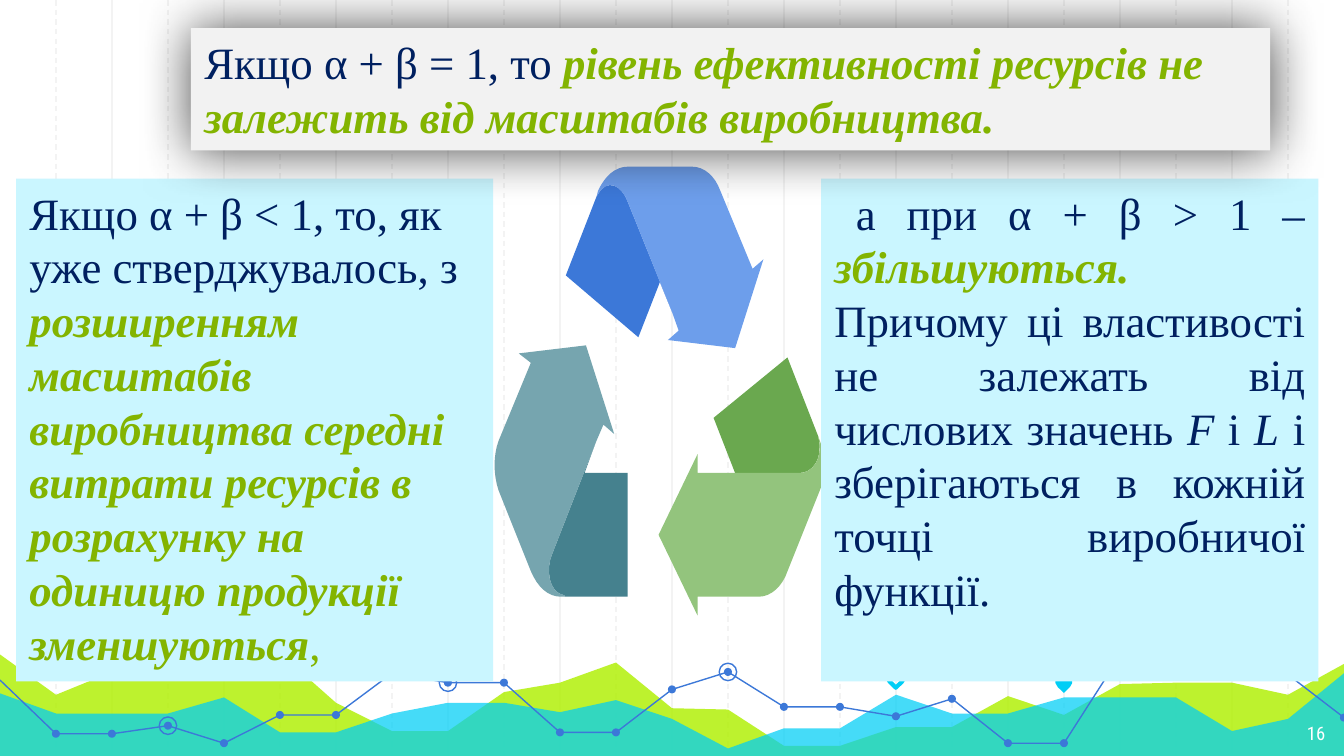
from dataclasses import dataclass

from lxml.etree import SubElement
from pptx import Presentation
from pptx.dml.color import RGBColor
from pptx.enum.dml import MSO_LINE
from pptx.enum.shapes import MSO_CONNECTOR, MSO_SHAPE
from pptx.enum.text import MSO_ANCHOR, MSO_AUTO_SIZE, PP_ALIGN
from pptx.oxml.ns import qn
from pptx.util import Cm, Pt


@dataclass(frozen=True)
class Theme:
    grid: str = "F3F3F3"
    lime: str = "AFF000"
    cyan: str = "00CEF6"
    blue: str = "3C78D8"
    light_blue: str = "6D9EEB"
    teal: str = "45818E"
    light_teal: str = "76A5AF"
    green: str = "6AA84F"
    light_green: str = "93C47D"
    panel: str = "CAF6FF"
    title_fill: str = "F2F2F2"
    text: str = "002060"
    accent: str = "83B400"
    white: str = "FFFFFF"
    body_font: str = "Times New Roman"
    number_font: str = "Roboto Condensed"
    body_size: float = 24
    body_leading: float = 28.8
    number_size: float = 10
    thin: float = 0.75


THEME = Theme()
STEP = 10 / 24  # distance between grid lines, in inches


def cm(inches):
    return Cm(inches * 2.54)


def bezier(start, curve, steps=8):
    """Points along a cubic curve, without its start."""
    x1, y1, x2, y2, x3, y3 = curve
    for i in range(1, steps + 1):
        t = i / steps
        u = 1 - t
        weights = (u ** 3, 3 * u * u * t, 3 * u * t * t, t ** 3)
        yield (sum(w * x for w, x in zip(weights, (start[0], x1, x2, x3))),
               sum(w * y for w, y in zip(weights, (start[1], y1, y2, y3))))


class SlideBuilder:
    def __init__(self, slide, theme):
        self.slide = slide
        self.shapes = slide.shapes
        self.theme = theme

    def paint(self, shape, fill=None, line=None, width=THEME.thin, opacity=None):
        shape.shadow.inherit = False
        if fill:
            shape.fill.solid()
            shape.fill.fore_color.rgb = RGBColor.from_string(fill)
            if opacity:
                color = shape.fill._xPr.find(qn("a:solidFill"))[0]
                SubElement(color, qn("a:alpha"), val=str(opacity * 1000))
        else:
            shape.fill.background()
        if line:
            shape.line.color.rgb = RGBColor.from_string(line)
            shape.line.width = Pt(width)
        else:
            shape.line.fill.background()
        return shape

    def grid_line(self, x, dashed):
        line = self.shapes.add_connector(MSO_CONNECTOR.STRAIGHT, cm(x), 0, cm(x), cm(5.65))
        line.line.color.rgb = RGBColor.from_string(self.theme.grid)
        line.line.width = Pt(self.theme.thin)
        if dashed:
            line.line.dash_style = MSO_LINE.DASH
        SubElement(line._element.spPr, qn("a:effectLst"))

    def preset(self, kind, box, rotation=0, **style):
        shape = self.shapes.add_shape(kind, *map(cm, box))
        shape.rotation = rotation
        return self.paint(shape, **style)

    def dot(self, x, y, size, **style):
        self.preset(MSO_SHAPE.OVAL, (x - size / 2, y - size / 2, size, size), **style)

    def outline(self, segments, close=True, **style):
        """A pair is a straight segment, six numbers are a cubic curve."""
        points = []
        for segment in segments:
            points.extend([segment] if len(segment) == 2 else bezier(points[-1], segment))
        points = [(cm(x), cm(y)) for x, y in points]
        builder = self.shapes.build_freeform(*points[0], scale=1.0)
        builder.add_line_segments(points[1:], close=close)
        self.paint(builder.convert_to_shape(), **style)

    def set_text(self, shape, runs, align=PP_ALIGN.LEFT, anchor=MSO_ANCHOR.TOP,
                 leading=None, indent=0):
        frame = shape.text_frame
        frame_format = {"word_wrap": True, "auto_size": MSO_AUTO_SIZE.NONE,
                        "vertical_anchor": anchor,
                        "margin_left": cm(0.1), "margin_right": cm(0.1),
                        "margin_top": cm(0.05), "margin_bottom": cm(0.05)}
        for name, value in frame_format.items():
            setattr(frame, name, value)
        paragraph = frame.paragraphs[0]
        paragraph_format = {"alignment": align, "space_before": Pt(0)}
        if leading:
            paragraph_format["line_spacing"] = Pt(leading)
        for name, value in paragraph_format.items():
            setattr(paragraph, name, value)
        if indent:
            properties = paragraph._p.get_or_add_pPr()
            properties.set("marL", "0")
            properties.set("indent", str(cm(indent)))
        for text, style in runs:
            run = paragraph.add_run()
            run.text = text
            font_format = {"name": self.theme.body_font, "size": Pt(self.theme.body_size),
                           "bold": False, "italic": False, "color": self.theme.text, **style}
            run.font.color.rgb = RGBColor.from_string(font_format.pop("color"))
            for name, value in font_format.items():
                setattr(run.font, name, value)

    def panel(self, box, runs, **layout):
        shape = self.preset(MSO_SHAPE.RECTANGLE, box, fill=self.theme.panel)
        self.set_text(shape, runs, leading=self.theme.body_leading, **layout)

    def title(self, box, runs):
        title = self.shapes.title
        for name, value in zip(("left", "top", "width", "height"), box):
            setattr(title, name, cm(value))
        self.paint(title, fill=self.theme.title_fill)
        effects = title._element.spPr.find(qn("a:effectLst"))
        shadow = SubElement(effects, qn("a:outerShdw"), blurRad=str(cm(0.4)), dist="0",
                            algn="ctr", rotWithShape="0")
        color = SubElement(shadow, qn("a:srgbClr"), val="000000")
        SubElement(color, qn("a:alpha"), val="70000")
        self.set_text(title, runs, leading=self.theme.body_leading)
        self.shapes._spTree.append(title._element)  # in front of the panels

    def slide_number(self, box, text):
        shape = self.shapes.add_textbox(*map(cm, box))
        style = {"name": self.theme.number_font, "size": Pt(self.theme.number_size),
                 "color": self.theme.white}
        self.set_text(shape, [(text, style)], PP_ALIGN.RIGHT, MSO_ANCHOR.MIDDLE)


LIME_HEIGHTS = [4.87, 5.17, 5, 5, 5, 4.86, 5.23, 5.44, 5.44, 5.15, 5.08, 4.93, 5.27, 5.28, 5.55,
                5.55, 5.41, 5.41, 5.18, 5.32, 5.09, 5.08, 5.08, 5.17, 4.94]
CYAN_HEIGHTS = [5.16, 5.31, 5.31, 5.31, 5.19, 5.45, 5.45, 5.31, 5.23, 5.23, 5.3, 5.21, 5.35, 5.57,
                5.42, 5.42, 5.17, 5.31, 5.31, 5.19, 5.19, 5.19, 5.44, 5.35, 5.01]
LINE_HEIGHTS = [5.06, 5.46, 5.46, 5.4, 5.53, 5.32, 5.32, 5.01, 5.08, 5.08, 5.45, 5.45, 5.13, 5,
                5.26, 5.26, 5.33, 5.2, 5.53, 5.53, 4.88, 5.02, 5.02, 5.02, 5.34]

# Folded arrows of the cycle: colour and outline
ARROWS = [
    (THEME.green, [(5.95, 3.52), (6.04, 3.52, 6.13, 3.42, 6.09, 3.25), (5.86, 2.66),
                   (5.31, 3.11), (5.47, 3.52)]),
    (THEME.teal, [(4.67, 3.52), (4.35, 3.52), (4.43, 3.3), (4.11, 4.12),
                  (4.06, 4.23, 4.08, 4.41, 4.2, 4.43), (4.2, 4.44), (4.67, 4.44)]),
    (THEME.blue, [(4.67, 1.5), (4.63, 1.39, 4.52, 1.31, 4.44, 1.46), (4.21, 2.05),
                  (4.75, 2.51), (4.91, 2.1), (5, 2.32)]),
    (THEME.light_teal, [(4.57, 3.23), (4.36, 2.57), (3.86, 2.63), (3.95, 2.7), (3.71, 3.28),
                        (3.67, 3.39, 3.67, 3.53, 3.71, 3.65), (3.95, 4.25),
                        (4, 4.37, 4.08, 4.44, 4.17, 4.44), (4.2, 4.44), (4.2, 4.43),
                        (4.08, 4.41, 4.06, 4.23, 4.11, 4.12), (4.43, 3.3), (4.49, 3.16)]),
    (THEME.light_blue, [(5.6, 2), (5.36, 1.42), (5.32, 1.31, 5.24, 1.24, 5.15, 1.24),
                        (4.67, 1.24), (4.58, 1.24, 4.5, 1.31, 4.45, 1.42), (4.44, 1.46),
                        (4.52, 1.31, 4.63, 1.39, 4.67, 1.5), (5, 2.32), (5.05, 2.46),
                        (4.97, 2.53), (5.47, 2.59), (5.68, 1.93)]),
    (THEME.light_green, [(6.1, 3.28), (6.09, 3.25), (6.13, 3.42, 6.04, 3.52, 5.95, 3.52),
                         (5.19, 3.52), (5.19, 3.38), (4.9, 3.98), (5.19, 4.58), (5.19, 4.44),
                         (5.65, 4.44), (5.73, 4.44, 5.82, 4.37, 5.86, 4.25), (6.1, 3.65),
                         (6.15, 3.54, 6.15, 3.39, 6.1, 3.28)]),
]


def main():
    presentation = Presentation()
    presentation.slide_width, presentation.slide_height = cm(10), cm(5.625)
    builder = SlideBuilder(presentation.slides.add_slide(presentation.slide_layouts[5]), THEME)

    # Background grid: solid lines on even steps, dashed on odd ones
    for i in [*range(2, 24, 2), *range(1, 24, 2)]:
        builder.grid_line(i * STEP, dashed=i % 2 == 1)

    # Area waves along the bottom
    for heights, color, opacity in ((LIME_HEIGHTS, THEME.lime, 82), (CYAN_HEIGHTS, THEME.cyan, 73)):
        wave = [(i * STEP, y) for i, y in enumerate(heights)]
        builder.outline([*wave, (10.02, 5.64), (-0.03, 5.64)], fill=color, opacity=opacity)

    # Map pins
    builder.preset(MSO_SHAPE.TEAR, (6.6, 4.96, 0.13, 0.13), 135, line=THEME.cyan, width=2.25)
    builder.preset(MSO_SHAPE.TEAR, (7.85, 5, 0.13, 0.13), 135, fill=THEME.cyan)

    # Line with its dots and rings
    points = [(i * STEP, y) for i, y in enumerate(LINE_HEIGHTS)]
    for first, last in ((0, 11), (11, 20), (20, 24)):
        builder.outline(points[first:last + 1], close=False, line=THEME.blue)
    for i in [*range(1, 7), *range(8, 20), 24]:
        builder.dot(*points[i], 0.06, fill=THEME.blue)
    for i in (3, 8, 13):
        builder.dot(*points[i], 0.13, line=THEME.blue)

    builder.slide_number((9.36, 5.28, 0.6, 0.35), "16")

    # Cycle of arrows
    for color, segments in ARROWS:
        builder.outline(segments, fill=color)

    # Text panels and title
    strong = {"bold": True, "italic": True, "color": THEME.accent}
    builder.panel((0.12, 1.33, 3.55, 3.74), [
        ("Якщо α + β < 1, то, як уже стверджувалось, з ", {}),
        ("розширенням масштабів виробництва середні витрати ресурсів в розрахунку "
         "на одиницю продукції зменшуються", strong),
        (",", {"color": THEME.accent})])
    builder.panel((6.11, 1.33, 3.7, 3.74), [
        ("а при α + β > 1 – ", {}),
        ("збільшуються. ", strong),
        ("Причому ці властивості не залежать від числових значень ", {}),
        ("F", {"italic": True}), (" і ", {}), ("L", {"italic": True}),
        (" і зберігаються в кожній точці виробничої функції.", {}),
    ], align=PP_ALIGN.JUSTIFY, indent=0.16)
    builder.title((1.42, 0.21, 8.03, 0.91), [
        ("Якщо α + β = 1, то ", {}),
        ("рівень ефективності ресурсів не залежить від масштабів виробництва.", strong)])

    presentation.save("out.pptx")


if __name__ == "__main__":
    main()
